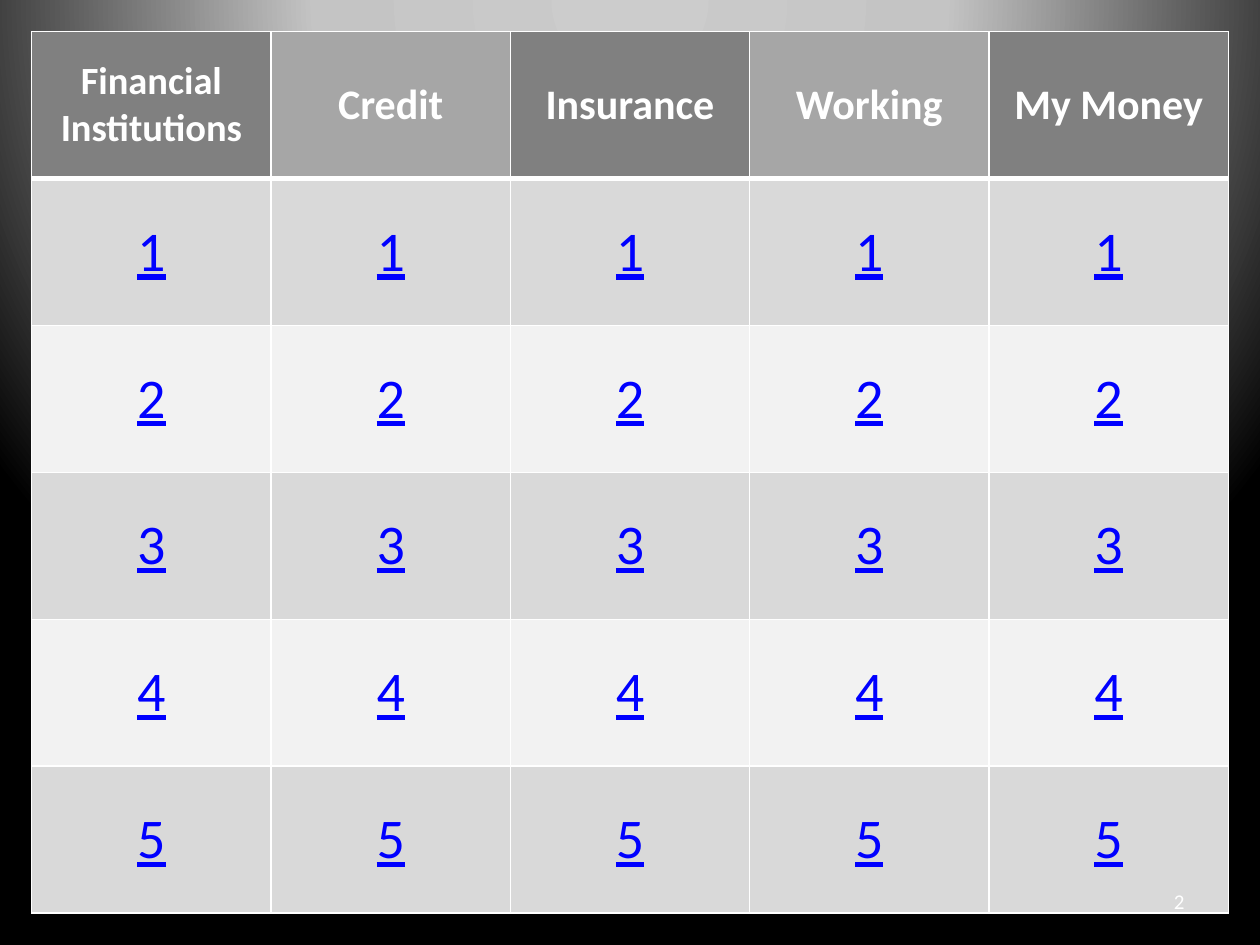
from lxml import etree
from pptx import Presentation
from pptx.dml.color import RGBColor
from pptx.enum import text
from pptx.oxml import ns
from pptx import util as u

HEADERS = ["Financial Institutions", "Credit", "Insurance", "Working", "My Money"]
LEVELS = ["1", "2", "3", "4", "5"]
PAGE = "2"

COLORS = {
    "white": "FFFFFF", "link": "0000FF",
    "head_dark": "808080", "head_light": "A6A6A6",
    "band_dark": "D9D9D9", "band_light": "F2F2F2",
}
BACKGROUND = [(0, "CCCCCC"), (40, "C4C4C4"), (100, "000000")]
FOCUS = {"l": 50, "t": -80, "r": 50, "b": 180}

LONG_HEAD = {"size": u.Pt(22), "bold": True}
HEAD = {"size": u.Pt(24), "bold": True}
LEVEL = {"size": u.Pt(32), "bold": False, "underline": True}
NUMBER = {"size": u.Pt(12)}

WIDTH, HEIGHT = u.Cm(25.4), u.Cm(19.05)
MARGIN = u.Cm(0.64)


def add(parent, tag, **attrs):
    return etree.SubElement(parent, ns.qn(tag), {k: str(v) for k, v in attrs.items()})


def paint_background(slide):
    """Radial gradient whose centre lies above the slide."""
    slide.background.fill.gradient()
    grad = slide.element.find(".//" + ns.qn("a:gradFill"))
    for child in list(grad):
        grad.remove(child)
    stops = add(grad, "a:gsLst")
    for pos, color in BACKGROUND:
        add(add(stops, "a:gs", pos=pos * 1000), "a:srgbClr", val=color)
    focus = {side: f"{value * 1000}" for side, value in FOCUS.items()}
    add(add(grad, "a:path", path="circle"), "a:fillToRect", **focus)


def write(tf, words, color, align, fmt):
    tf.word_wrap = True
    p = tf.paragraphs[0]
    p.alignment = align
    r = p.add_run()
    r.text = words
    r.font.name = "Calibri"
    r.font.color.rgb = RGBColor.from_string(COLORS[color])
    for name, value in fmt.items():
        setattr(r.font, name, value)


def set_borders(cell, widths):
    """White lines, widths in points; they must precede the fill."""
    tc_pr = cell._tc.get_or_add_tcPr()
    for i, (side, width) in enumerate(widths.items()):
        ln = add(tc_pr, f"a:ln{side}", w=u.Pt(width))
        add(add(ln, "a:solidFill"), "a:srgbClr", val=COLORS["white"])
        tc_pr.insert(i, ln)


def add_board(slide):
    rows = [HEADERS] + [[level] * len(HEADERS) for level in LEVELS]
    width, height = WIDTH - 2 * MARGIN, HEIGHT - 2 * MARGIN
    table = slide.shapes.add_table(
        len(rows), len(HEADERS), MARGIN, MARGIN, width, height).table
    for col in table.columns:
        col.width = width // len(HEADERS)
    for row in table.rows:
        row.height = height // len(rows)

    for i, row in enumerate(rows):
        for j, words in enumerate(row):
            cell = table.cell(i, j)
            if i == 0:
                fill = "head_light" if j % 2 else "head_dark"
                color, fmt = "white", HEAD if j else LONG_HEAD
            else:
                fill = "band_dark" if i % 2 else "band_light"
                color, fmt = "link", LEVEL
            cell.vertical_anchor = text.MSO_ANCHOR.MIDDLE
            cell.fill.solid()
            cell.fill.fore_color.rgb = RGBColor.from_string(COLORS[fill])
            set_borders(cell, {"L": 1, "R": 1, "T": 3 if i == 1 else 1,
                               "B": 3 if i == 0 else 1})
            write(cell.text_frame, words, color, text.PP_ALIGN.CENTER, fmt)


def add_page_number(slide):
    box = slide.shapes.add_textbox(u.Cm(18.21), u.Cm(17.65), u.Cm(5.92), u.Cm(1.02))
    box.text_frame.vertical_anchor = text.MSO_ANCHOR.MIDDLE
    write(box.text_frame, PAGE, "white", text.PP_ALIGN.RIGHT, NUMBER)


def main():
    prs = Presentation()
    prs.slide_width, prs.slide_height = WIDTH, HEIGHT
    slide = prs.slides.add_slide(prs.slide_layouts[6])
    paint_background(slide)
    add_board(slide)
    add_page_number(slide)
    prs.save("out.pptx")


if __name__ == "__main__":
    main()
